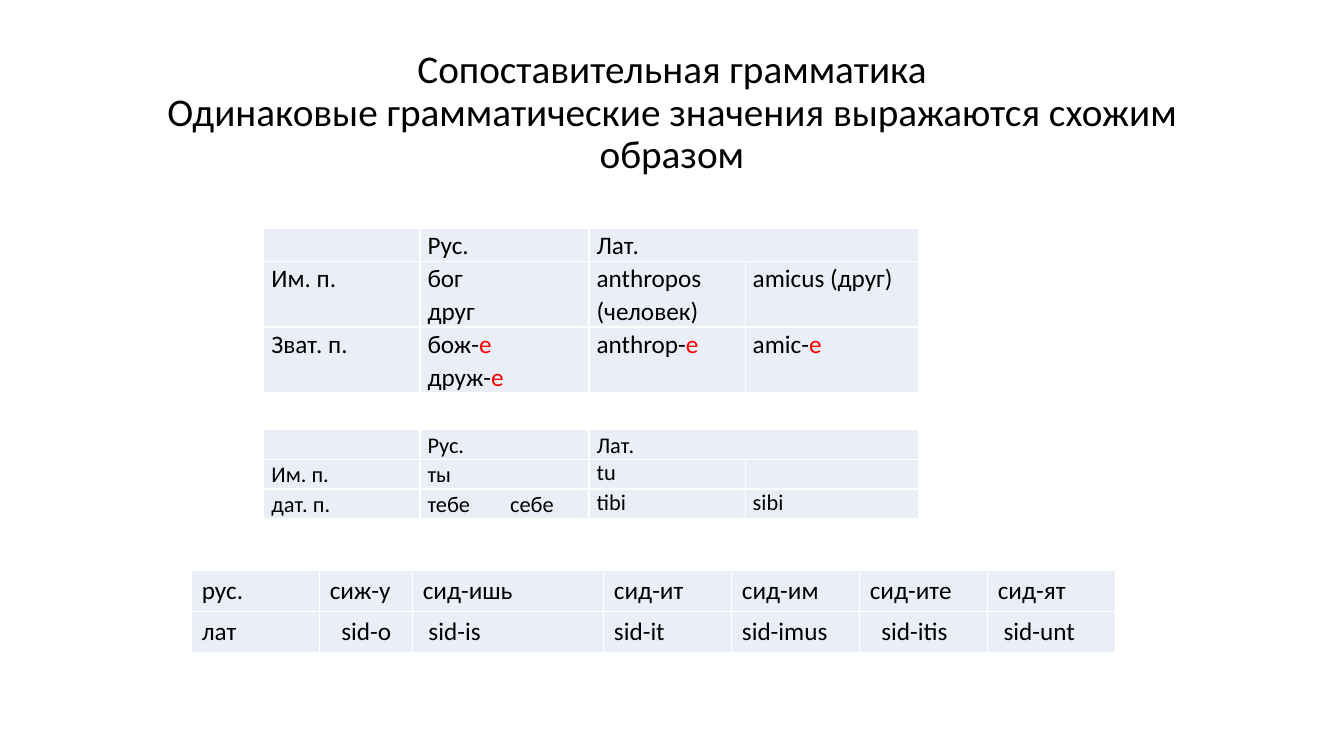
import dataclasses
import pptx
import pptx.util
import pptx.dml.color
import pptx.enum.text
import lxml.etree

Pt = pptx.util.Pt
RGB = pptx.dml.color.RGBColor.from_string
Align = pptx.enum.text.PP_ALIGN
Anchor = pptx.enum.text.MSO_ANCHOR


@dataclasses.dataclass(frozen=True)
class Theme:
    face: str = "Calibri"
    ink: str = "000000"
    mark: str = "FF0000"
    cell: str = "EAEFF7"
    head: int = 28
    body: int = 18
    small: int = 16


THEME = Theme()

# A bar pair marks a red ending; a newline is a line break
CASES = [
    ["", "Рус.", "Лат.", ""],
    ["Им. п.", "бог\nдруг", "аnthropos (человек)", "аmicus (друг)"],
    ["Зват. п.", "бож-|е|\nдруж-|е|", "аnthrop-|e|", "аmic-|e|"],
]
PRONOUNS = [
    ["", "Рус.", "Лат.", ""],
    ["Им. п.", "ты", "tu", ""],
    ["дат. п.", "тебе\tсебе", "tibi", "sibi"],
]
VERBS = [
    ["рус.", "сиж-у", "сид-ишь", "сид-ит", "сид-им", "сид-ите", "сид-ят"],
    ["лат", "sid-o", "sid-is", "sid-it", "sid-imus", "sid-itis", "sid-unt"],
]


def style(font, size, color=THEME.ink):
    font.name = THEME.face
    font.size = Pt(size)
    font.color.rgb = RGB(color)


def add_title(slide, text):
    title = slide.shapes.title
    title.left, title.top = Pt(66), Pt(28.8)
    title.width, title.height = Pt(828), Pt(104.4)
    frame = title.text_frame
    frame.text = text
    frame.vertical_anchor = Anchor.MIDDLE
    para = frame.paragraphs[0]
    para.alignment = Align.CENTER
    para.line_spacing = 0.9
    style(para.font, THEME.head)


def write(para, text, size):
    style(para.font, size)
    for i, part in enumerate(text.split("|")):
        for j, line in enumerate(part.split("\n")):
            if j:
                para.add_line_break()
            if line:
                run = para.add_run()
                run.text = line
                if i % 2:
                    run.font.color.rgb = RGB(THEME.mark)


def add_table(slide, data, left, top, cols, rows, size):
    table = slide.shapes.add_table(
        len(rows), len(cols), Pt(left), Pt(top), Pt(sum(cols)), Pt(sum(rows))
    ).table
    table.first_row = table.horz_banding = False
    for col, width in zip(table.columns, cols):
        col.width = Pt(width)
    for row, height, texts in zip(table.rows, rows, data):
        row.height = Pt(height)
        for cell, text in zip(row.cells, texts):
            cell.fill.solid()
            cell.fill.fore_color.rgb = RGB(THEME.cell)
            write(cell.text_frame.paragraphs[0], text, size)
    return table


def set_tight(table, plain=()):
    """Drop the vertical margins; justify all but the plain texts."""
    for cell in table.iter_cells():
        cell.margin_left = cell.margin_right = Pt(5.4)
        cell.margin_top = cell.margin_bottom = 0
        if cell.text not in plain:
            para = cell.text_frame.paragraphs[0]
            para.alignment = Align.JUSTIFY
            para.line_spacing = 1.07
    table.cell(0, 2).merge(table.cell(0, 3))


def add_tab(cell, stop):
    props = cell.text_frame.paragraphs[0]._p.get_or_add_pPr()
    space = props.nsmap["a"]
    tabs = lxml.etree.Element(f"{{{space}}}tabLst")
    lxml.etree.SubElement(tabs, f"{{{space}}}tab", pos=str(Pt(stop)), algn="l")
    props.find(f"{{{space}}}defRPr").addprevious(tabs)


def main():
    deck = pptx.Presentation()
    deck.slide_width, deck.slide_height = Pt(960), Pt(540)
    slide = deck.slides.add_slide(deck.slide_layouts[5])
    add_title(slide, "Сопоставительная грамматика\v"
              "Одинаковые грамматические значения выражаются схожим образом")

    # Noun cases and pronouns share one grid
    grid = [111.5, 120.8, 111.5, 123.6]
    cases = add_table(slide, CASES, 188.5, 163, grid, [23, 47, 47], THEME.body)
    set_tight(cases)
    forms = add_table(slide, PRONOUNS, 188.5, 307, grid, [21.2] * 3, THEME.small)
    set_tight(forms, plain=("", "tu", "tibi", "sibi"))
    add_tab(forms.cell(2, 1), 59)

    # Verb endings, some Latin forms set in a little
    wide = [91.4, 66.4, 136.6] + [91.4] * 4
    verbs = add_table(slide, VERBS, 137, 407.7, wide, [29.2] * 2, THEME.body)
    for col, shift in {1: 8.2, 2: 4.1, 5: 8.2, 6: 4.1}.items():
        verbs.cell(1, col).margin_left = Pt(7.2 + shift)

    deck.save("out.pptx")


if __name__ == "__main__":
    main()
